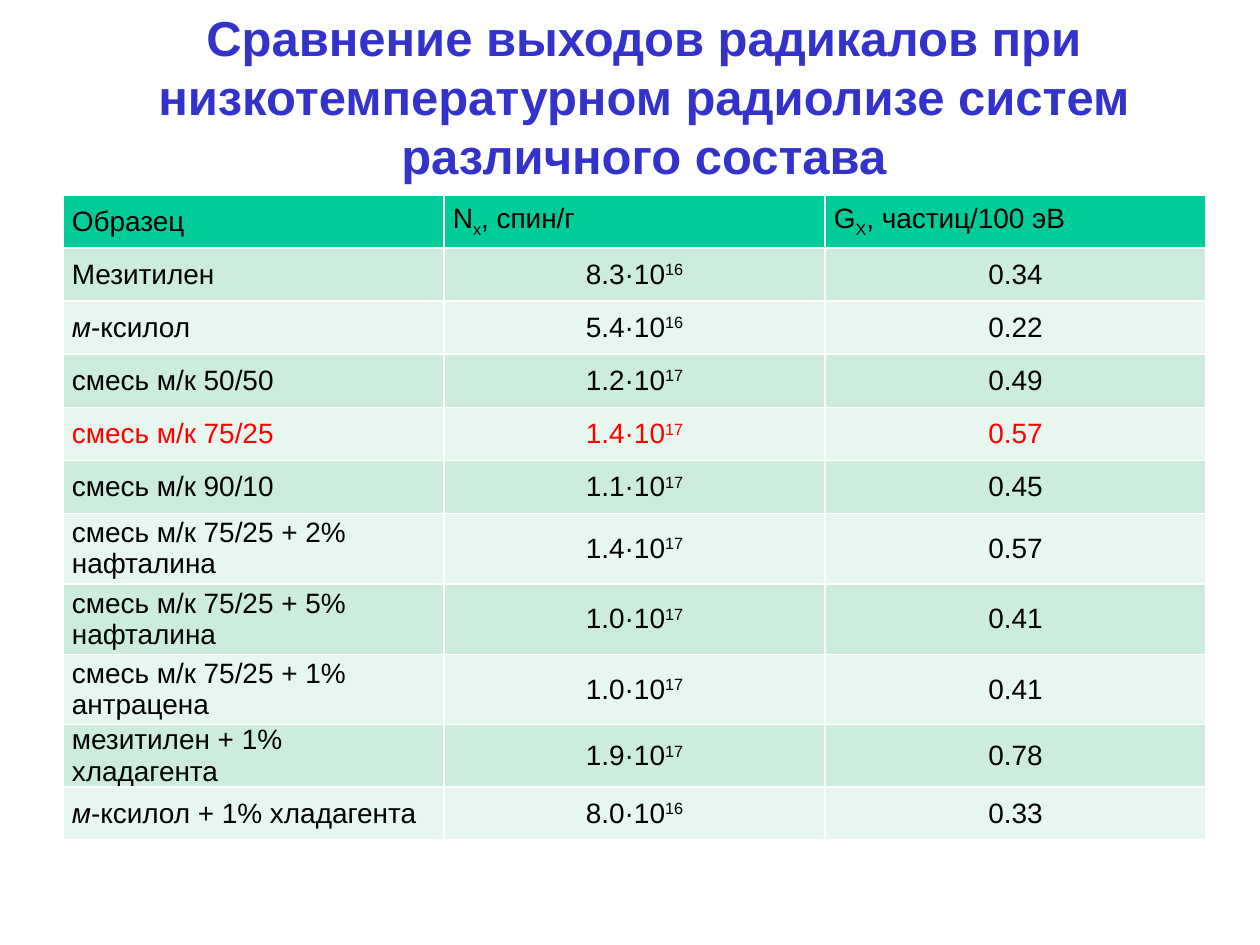
import dataclasses

import pptx
import pptx.dml.color
import pptx.enum.text
import pptx.oxml
import pptx.oxml.ns
import pptx.util

Cm = pptx.util.Cm
Pt = pptx.util.Pt
ALIGN = pptx.enum.text.PP_ALIGN
MIDDLE = pptx.enum.text.MSO_ANCHOR.MIDDLE


@dataclasses.dataclass(frozen=True)
class Theme:
    font: str = "Arial"
    title_size: int = 28
    table_size: int = 16
    title: str = "3333CC"
    text: str = "000000"
    highlight: str = "FF0000"
    header: str = "00CC99"
    bands: tuple = ("CCECDE", "E7F6EF")
    border: str = "FFFFFF"
    border_width: int = 1


THEME = Theme()
SUBSCRIPT, SUPERSCRIPT = -25000, 30000

TITLE = ("Сравнение выходов радикалов при низкотемпературном радиолизе "
         "систем различного состава")
HEADINGS = (
    ["Образец"],
    ["N", ("x", {"baseline": SUBSCRIPT}), ", спин/г"],
    ["G", ("X", {"baseline": SUBSCRIPT}), ", частиц/100 эВ"],
)
META = ("м", {"italic": True})
# sample, mantissa and exponent of the spin count, radiation yield
SAMPLES = (
    (["Мезитилен"], "8.3", "16", "0.34"),
    ([META, "-ксилол"], "5.4", "16", "0.22"),
    (["смесь м/к 50/50"], "1.2", "17", "0.49"),
    (["смесь м/к 75/25"], "1.4", "17", "0.57"),
    (["смесь м/к 90/10"], "1.1", "17", "0.45"),
    (["смесь м/к 75/25 + 2% нафталина"], "1.4", "17", "0.57"),
    (["смесь м/к 75/25 + 5% нафталина"], "1.0", "17", "0.41"),
    (["смесь м/к 75/25 + 1% антрацена"], "1.0", "17", "0.41"),
    (["мезитилен + 1% хладагента"], "1.9", "17", "0.78"),
    ([META, "-ксилол + 1% хладагента"], "8.0", "16", "0.33"),
)
HIGHLIGHTED = 4
TWO_LINE_ROWS = (6, 7, 8)
ROW_HEIGHT, TWO_LINE_HEIGHT = Cm(1.07), Cm(1.42)


def rgb(color):
    return pptx.dml.color.RGBColor.from_string(color)


def write(frame, parts, size=THEME.table_size, color=THEME.text, bold=False,
          align=ALIGN.LEFT):
    """Fill one paragraph; a part is a string or a (string, format) pair."""
    paragraph = frame.paragraphs[0]
    paragraph.alignment = align
    for part in parts:
        words, style = (part, {}) if isinstance(part, str) else part
        run = paragraph.add_run()
        run.text = words
        run.font.name = THEME.font
        run.font.size = Pt(size)
        run.font.bold = bold
        run.font.italic = style.get("italic", False)
        run.font.color.rgb = rgb(color)
        if "baseline" in style:
            run._r.get_or_add_rPr().set("baseline", str(style["baseline"]))


def add_borders(cell):
    """Draw all four sides; they must precede the fill in the cell's XML."""
    properties = cell._tc.get_or_add_tcPr()
    for place, side in enumerate(("lnL", "lnR", "lnT", "lnB")):
        properties.insert(place, pptx.oxml.parse_xml(
            f'<a:{side} {pptx.oxml.ns.nsdecls("a")} w="{Pt(THEME.border_width)}">'
            f'<a:solidFill><a:srgbClr val="{THEME.border}"/></a:solidFill></a:{side}>'))


def fill_cell(cell, parts, fill, **text_format):
    cell.fill.solid()
    cell.fill.fore_color.rgb = rgb(fill)
    add_borders(cell)
    cell.vertical_anchor = MIDDLE
    cell.margin_left = cell.margin_right = Cm(0.18)
    cell.margin_top = cell.margin_bottom = 0
    write(cell.text_frame, parts, **text_format)


def place_title(slide, left, top, width, height):
    title = slide.shapes.title
    title.left, title.top, title.width, title.height = left, top, width, height
    frame = title.text_frame
    frame.word_wrap = True
    frame.auto_size = pptx.enum.text.MSO_AUTO_SIZE.NONE
    frame.vertical_anchor = MIDDLE
    write(frame, [TITLE], size=THEME.title_size, color=THEME.title, bold=True,
          align=ALIGN.CENTER)


def place_yield_table(slide, left, top, width):
    heights = [TWO_LINE_HEIGHT if row in TWO_LINE_ROWS else ROW_HEIGHT
               for row in range(len(SAMPLES) + 1)]
    yields = slide.shapes.add_table(len(heights), len(HEADINGS), left, top,
                                    width, sum(heights)).table
    for row, height in zip(yields.rows, heights):
        row.height = height
    for column, heading in enumerate(HEADINGS):
        fill_cell(yields.cell(0, column), heading, THEME.header)
    for row, (sample, mantissa, exponent, radiation_yield) in enumerate(SAMPLES, 1):
        spins = [f"{mantissa}·10", (exponent, {"baseline": SUPERSCRIPT})]
        for column, parts in enumerate((sample, spins, [radiation_yield])):
            fill_cell(yields.cell(row, column), parts, THEME.bands[(row - 1) % 2],
                      color=THEME.highlight if row == HIGHLIGHTED else THEME.text,
                      align=ALIGN.CENTER if column else ALIGN.LEFT)


def main():
    deck = pptx.Presentation()
    deck.slide_width, deck.slide_height = Cm(25.4), Cm(19.05)
    title_only = deck.slide_layouts[5]
    slide = deck.slides.add_slide(title_only)
    place_title(slide, Cm(1.27), Cm(0.33), Cm(23.42), Cm(3.2))
    place_yield_table(slide, Cm(1.27), Cm(3.93), Cm(23.04))
    deck.save("out.pptx")


if __name__ == "__main__":
    main()
